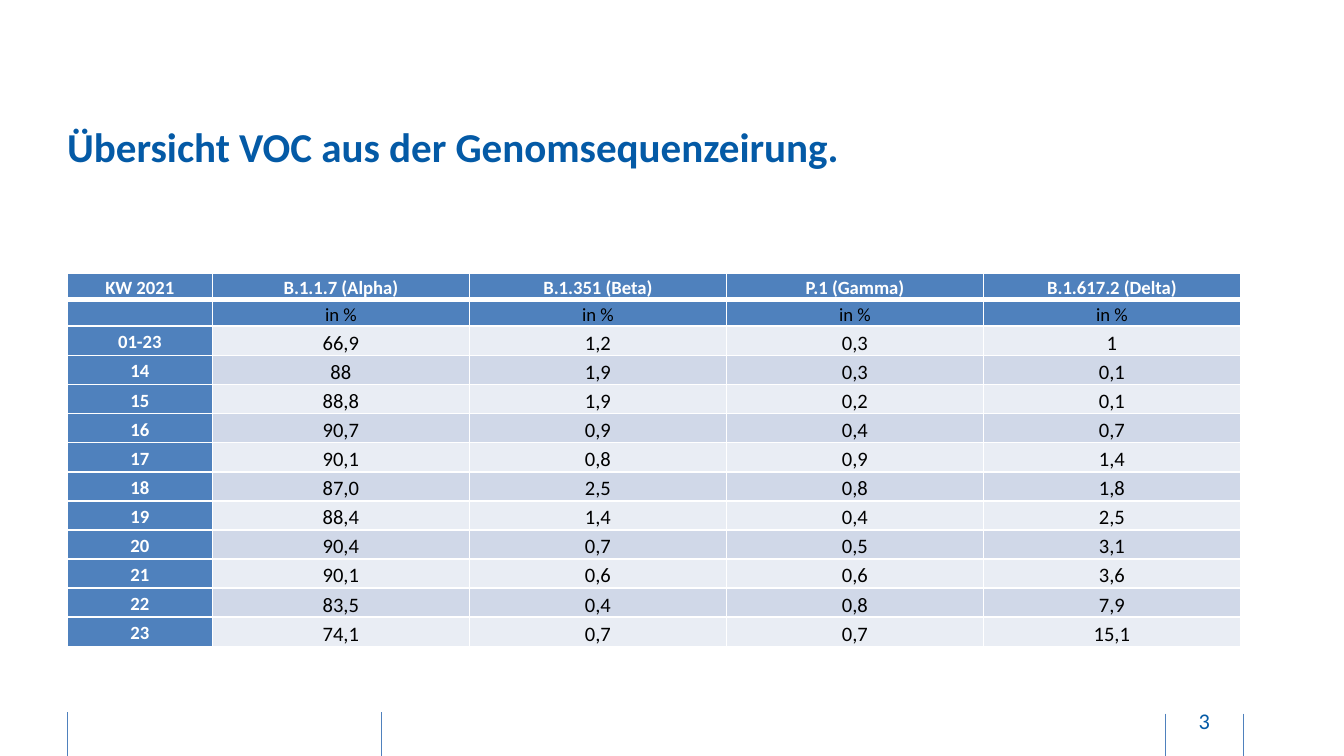
from dataclasses import dataclass

from lxml import etree
from pptx import Presentation
from pptx import util as u
from pptx.dml.color import RGBColor
from pptx.enum import shapes, text
from pptx.oxml import ns


@dataclass(frozen=True)
class Theme:
    """Colours, font and type sizes of the slide."""
    font: str = "Calibri"
    heading: str = "045AA6"
    accent: str = "4F81BD"
    light: str = "FFFFFF"
    dark: str = "000000"
    bands: tuple = ("E9EDF4", "D0D8E8")
    title_size: float = 22
    page_size: float = 12
    label_size: float = 10
    value_size: float = 11


THEME = Theme()
VARIANTS = ["KW 2021", "B.1.1.7 (Alpha)", "B.1.351 (Beta)", "P.1 (Gamma)", "B.1.617.2 (Delta)"]
UNITS = ["", "in %", "in %", "in %", "in %"]
WEEKS = [
    ["01-23", "66,9", "1,2", "0,3", "1"],
    ["14", "88", "1,9", "0,3", "0,1"],
    ["15", "88,8", "1,9", "0,2", "0,1"],
    ["16", "90,7", "0,9", "0,4", "0,7"],
    ["17", "90,1", "0,8", "0,9", "1,4"],
    ["18", "87,0", "2,5", "0,8", "1,8"],
    ["19", "88,4", "1,4", "0,4", "2,5"],
    ["20", "90,4", "0,7", "0,5", "3,1"],
    ["21", "90,1", "0,6", "0,6", "3,6"],
    ["22", "83,5", "0,4", "0,8", "7,9"],
    ["23", "74,1", "0,7", "0,7", "15,1"],
]


def write(frame, words, *, size, color, bold=False, align=None, spacing=None):
    """Write one formatted paragraph into a text frame."""
    paragraph = frame.paragraphs[0]
    paragraph.alignment = align
    paragraph.line_spacing = spacing
    if not words:
        etree.SubElement(paragraph._p, ns.qn("a:endParaRPr"), sz=str(size * 100))
        return
    run = paragraph.add_run()
    run.text = words
    run.font.name = THEME.font
    run.font.size = u.Pt(size)
    run.font.bold = bold
    run.font.color.rgb = RGBColor.from_string(color)


def add_label(slide, box, words, inset=0, **style):
    """Place a vertically centred text box."""
    frame = slide.shapes.add_textbox(*map(u.Inches, box)).text_frame
    frame.word_wrap = True
    frame.vertical_anchor = text.MSO_ANCHOR.MIDDLE
    frame.margin_left = frame.margin_right = 0
    frame.margin_top = frame.margin_bottom = u.Inches(inset)
    write(frame, words, **style)


def set_borders(cell, **widths):
    """Draw white cell borders with widths in points for L, R, T and B."""
    properties = cell._tc.get_or_add_tcPr()
    for side, width in widths.items():
        line = etree.SubElement(properties, ns.qn(f"a:ln{side}"), w=str(u.Pt(width)))
        fill = etree.SubElement(line, ns.qn("a:solidFill"))
        etree.SubElement(fill, ns.qn("a:srgbClr"), val=THEME.light)


def fill_cell(cell, words, row, column):
    """Format a table cell according to its row and column."""
    is_value = row > 1 and column > 0
    is_unit = row == 1 and column > 0
    cell.margin_left = cell.margin_right = u.Inches(0.05)
    cell.margin_top = cell.margin_bottom = u.Pt(0.2)
    cell.vertical_anchor = text.MSO_ANCHOR.TOP if is_value else text.MSO_ANCHOR.MIDDLE
    set_borders(cell, L=1, R=1, T=3 if row == 1 else 1, B=3 if row == 0 else 1)
    cell.fill.solid()
    color = THEME.bands[row % 2] if is_value else THEME.accent
    cell.fill.fore_color.rgb = RGBColor.from_string(color)
    write(cell.text_frame, words,
          size=THEME.value_size if is_value else THEME.label_size,
          color=THEME.dark if is_value or is_unit else THEME.light,
          bold=not (is_value or is_unit),
          align=text.PP_ALIGN.CENTER, spacing=1.15)


def add_variant_table(slide, box):
    """Place the table of variant shares by calendar week."""
    rows = [VARIANTS, UNITS, *WEEKS]
    table = slide.shapes.add_table(len(rows), len(VARIANTS), *map(u.Inches, box)).table
    week_width = 1.08
    variant_width = (box[2] - week_width) / (len(VARIANTS) - 1)
    for column, grid_column in enumerate(table.columns):
        grid_column.width = u.Inches(variant_width if column else week_width)
    for row, values in enumerate(rows):
        table.rows[row].height = u.Inches(0.18 if row == 1 else 0.2)
        for column, words in enumerate(values):
            fill_cell(table.cell(row, column), words, row, column)


def add_footer(slide, box):
    """Place the footer dividers and the page number."""
    left, top, width, height = box
    for offset, drop in ((0, 0), (2.34, 0), (8.17, 0.01), (width, 0.01)):
        x, y = u.Inches(left + offset), top + drop
        divider = slide.shapes.add_connector(
            shapes.MSO_CONNECTOR.STRAIGHT, x, u.Inches(y), x, u.Inches(y + height))
        divider.line.color.rgb = RGBColor.from_string(THEME.accent)
        divider.line.width = u.Pt(0.5)
        etree.SubElement(divider._element.spPr, ns.qn("a:effectLst"))
    add_label(slide, (left + 8.19, top - 0.09, 0.54, 0.3), "3", inset=0.05,
              size=THEME.page_size, color=THEME.heading, align=text.PP_ALIGN.CENTER)


def main():
    """Build and save the slide."""
    deck = Presentation()
    deck.slide_width, deck.slide_height = u.Inches(10), u.Inches(10 * 9 / 16)
    slide = deck.slides.add_slide(deck.slide_layouts[6])
    add_footer(slide, (0.5, 5.3, 8.75, 0.34))
    add_label(slide, (0.5, 0.7, 8.73, 0.78), "Übersicht VOC aus der Genomsequenzeirung.",
              size=THEME.title_size, color=THEME.heading, bold=True)
    add_variant_table(slide, (0.5, 2.03, 8.73, 2.59))
    deck.save("out.pptx")


if __name__ == "__main__":
    main()
